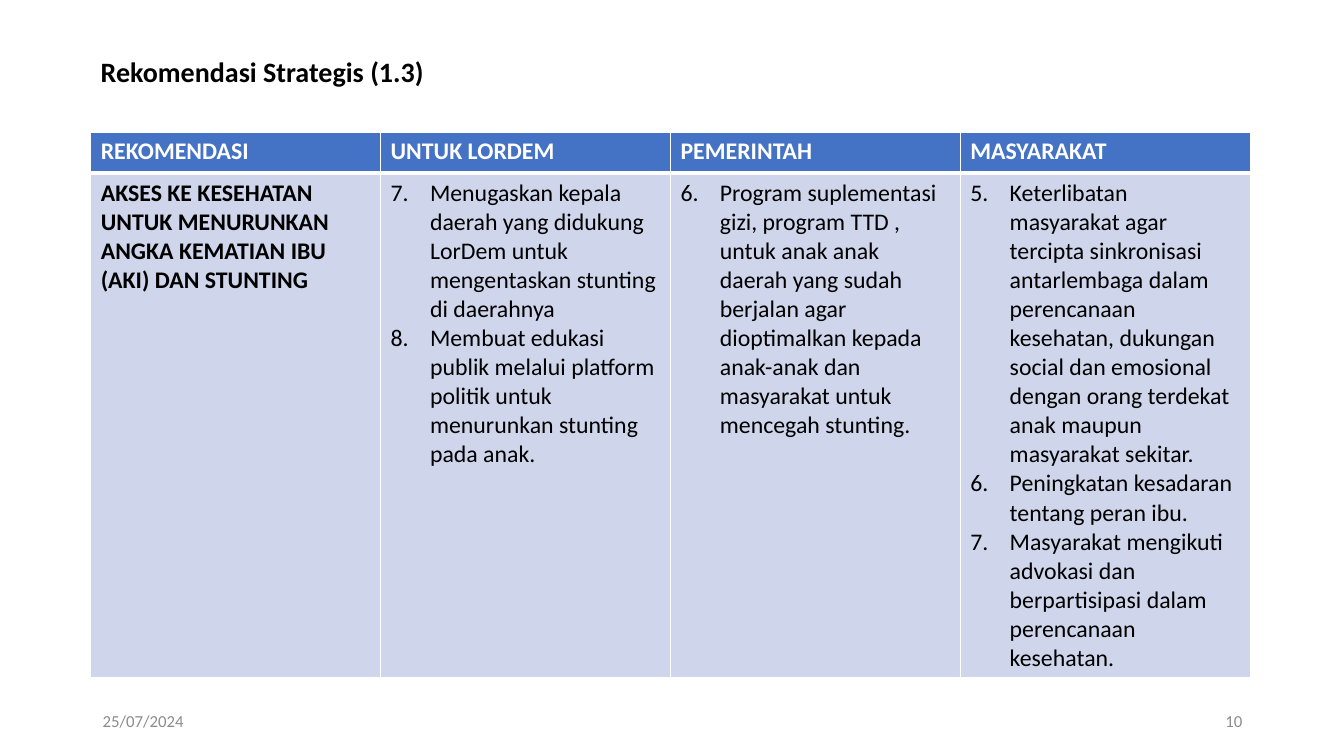
"""Build the strategic recommendations slide with its four-column table."""
from dataclasses import dataclass

import lxml.etree
import pptx
import pptx.dml.color
import pptx.enum.text
import pptx.oxml.ns
import pptx.util

Inches = pptx.util.Inches
RGBColor = pptx.dml.color.RGBColor
PP_ALIGN = pptx.enum.text.PP_ALIGN
qn = pptx.oxml.ns.qn

BLACK = RGBColor(0x00, 0x00, 0x00)
WHITE = RGBColor(0xFF, 0xFF, 0xFF)
GRAY = RGBColor(0x8C, 0x8C, 0x8C)
HEADER_BLUE = RGBColor(0x44, 0x72, 0xC4)
BODY_BLUE = RGBColor(0xCF, 0xD5, 0xEA)

TABLE_SIZE = 17
ROW_HEIGHTS = (0.41, 5.0)
NUMBER_INDENT = Inches(0.39)


@dataclass
class Label:
    text: str
    left: float
    top: float
    width: float
    height: float
    size: int
    color: RGBColor
    bold: bool = False
    align: PP_ALIGN = PP_ALIGN.LEFT
    line_spacing: float = 1.0


@dataclass
class Column:
    heading: str
    items: list[str]
    first_number: int | None = None


LABELS = [
    Label("Rekomendasi Strategis (1.3)", 0.9, 0, 11.5, 1.45, 20, BLACK, bold=True, line_spacing=0.9),
    Label("25/07/2024", 0.92, 6.95, 3, 0.4, 12, GRAY),
    Label("10", 9.42, 6.95, 3, 0.4, 12, GRAY, align=PP_ALIGN.RIGHT),
]

COLUMNS = [
    Column("REKOMENDASI", [
        "AKSES KE KESEHATAN UNTUK MENURUNKAN ANGKA KEMATIAN IBU (AKI) DAN STUNTING",
    ]),
    Column("UNTUK LORDEM", [
        "Menugaskan kepala daerah yang didukung LorDem untuk mengentaskan stunting di daerahnya",
        "Membuat edukasi publik melalui platform politik untuk menurunkan stunting pada anak.",
    ], 7),
    Column("PEMERINTAH", [
        "Program suplementasi gizi, program TTD , untuk anak anak daerah yang sudah berjalan agar "
        "dioptimalkan kepada anak-anak dan masyarakat untuk mencegah stunting.",
    ], 6),
    Column("MASYARAKAT", [
        "Keterlibatan masyarakat agar tercipta sinkronisasi antarlembaga dalam perencanaan kesehatan, "
        "dukungan social dan emosional dengan orang terdekat anak maupun masyarakat sekitar.",
        "Peningkatan kesadaran tentang peran ibu.",
        "Masyarakat mengikuti advokasi dan berpartisipasi dalam perencanaan kesehatan.",
    ], 5),
]


def set_font(para, size: int, color: RGBColor, bold: bool) -> None:
    """Apply the slide typeface to a whole paragraph."""
    para.font.name = "Calibri"
    para.font.size = pptx.util.Pt(size)
    para.font.bold = bold
    para.font.color.rgb = color


def add_label(page, label: Label) -> None:
    """Draw one vertically centred line of text."""
    box = page.shapes.add_textbox(
        Inches(label.left), Inches(label.top), Inches(label.width), Inches(label.height))
    frame = box.text_frame
    frame.word_wrap = True
    frame.vertical_anchor = pptx.enum.text.MSO_ANCHOR.MIDDLE
    para = frame.paragraphs[0]
    para.text = label.text
    para.alignment = label.align
    para.line_spacing = label.line_spacing
    set_font(para, label.size, label.color, label.bold)


def set_borders(cell, top: int, bottom: int) -> None:
    """Give a cell white borders with the stated top and bottom weights."""
    properties = cell._tc.get_or_add_tcPr()
    for side, weight in {"L": 1, "R": 1, "T": top, "B": bottom}.items():
        line = lxml.etree.SubElement(properties, qn(f"a:ln{side}"), w=str(pptx.util.Pt(weight)))
        fill = lxml.etree.SubElement(line, qn("a:solidFill"))
        lxml.etree.SubElement(fill, qn("a:srgbClr"), val=str(WHITE))


def number_paragraph(para, start: int) -> None:
    """Number a paragraph with a hanging indent."""
    properties = para._p.get_or_add_pPr()
    properties.set("marL", str(NUMBER_INDENT))
    properties.set("indent", str(-NUMBER_INDENT))
    lxml.etree.SubElement(properties, qn("a:buAutoNum"), type="arabicPeriod", startAt=str(start))


def fill_cell(cell, items: list[str], is_header: bool, first_number: int | None = None) -> None:
    """Style a table cell and write its paragraphs."""
    set_borders(cell, top=1 if is_header else 3, bottom=3 if is_header else 1)
    cell.fill.solid()
    cell.fill.fore_color.rgb = HEADER_BLUE if is_header else BODY_BLUE
    cell.text = "\n".join(items)
    for para in cell.text_frame.paragraphs:
        if first_number is not None:
            number_paragraph(para, first_number)
        set_font(para, TABLE_SIZE, WHITE if is_header else BLACK, first_number is None)


def add_recommendations(page, columns: list[Column]) -> None:
    """Draw the recommendations table with equal columns."""
    table = page.shapes.add_table(
        len(ROW_HEIGHTS), len(columns), Inches(0.9), Inches(1.31),
        Inches(11.5), Inches(sum(ROW_HEIGHTS))).table
    for row, height in zip(table.rows, ROW_HEIGHTS):
        row.height = Inches(height)
    for index, column in enumerate(columns):
        fill_cell(table.cell(0, index), [column.heading], True)
        fill_cell(table.cell(1, index), column.items, False, column.first_number)


def main() -> None:
    """Create and save the deck."""
    deck = pptx.Presentation()
    deck.slide_width = Inches(13.33)
    deck.slide_height = Inches(7.5)
    page = deck.slides.add_slide(deck.slide_layouts[6])
    add_recommendations(page, COLUMNS)
    for label in LABELS:
        add_label(page, label)
    deck.save("out.pptx")


if __name__ == "__main__":
    main()
